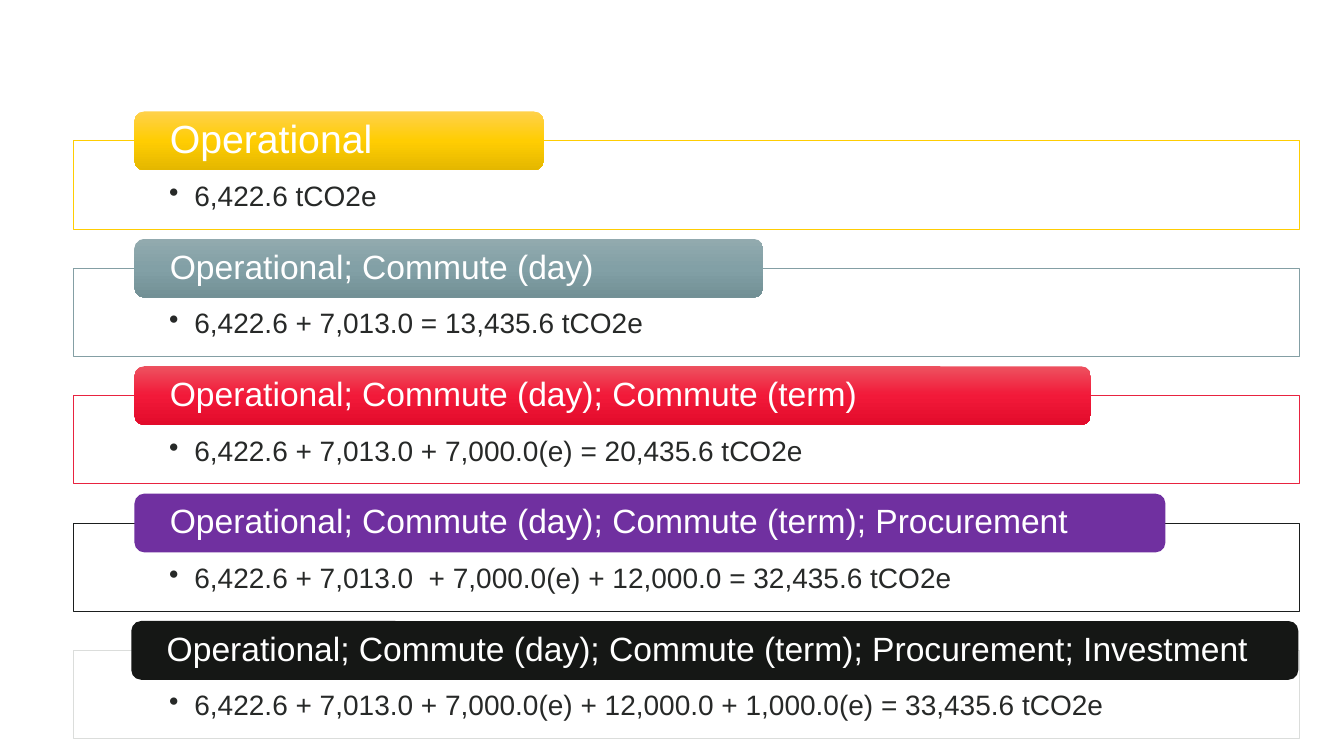
from copy import deepcopy
from pptx import Presentation
from pptx import util as u
from pptx.dml import color
from pptx.enum import shapes, text
from pptx.oxml import ns
from lxml import etree

ROWS = [
    ("Operational", "6,422.6 tCO2e", "gold", 3.39, 10.31, 28),
    ("Operational; Commute (day)", "6,422.6 + 7,013.0 = 13,435.6 tCO2e",
     "slate", 3.39, 15.85, 24),
    ("Operational; Commute (day); Commute (term)",
     "6,422.6 + 7,013.0 + 7,000.0(e) = 20,435.6 tCO2e",
     "red", 3.39, 24.1, 24),
    ("Operational; Commute (day); Commute (term); Procurement",
     "6,422.6 + 7,013.0  + 7,000.0(e) + 12,000.0 = 32,435.6 tCO2e",
     "violet", 3.39, 25.98, 24),
    ("Operational; Commute (day); Commute (term); Procurement; Investment",
     "6,422.6 + 7,013.0 + 7,000.0(e) + 12,000.0 + 1,000.0(e) = 33,435.6 tCO2e",
     "black", 3.31, 29.41, 24),
]
FILLS = {
    "gold": ["FFD14B", "FFCD02", "E4B700"],
    "slate": ["92AAAE", "82A0A6", "729095"],
    "red": ["ED515F", "F21939", "E20B2B"],
    "violet": ["7030A0"],
    "black": ["151715"],
}
LINES = {"gold": "FFCD02", "slate": "849FA4", "red": "E82340",
         "violet": "1B1E1E", "black": "DBDDDB"}
COLORS = {"white": "FFFFFF", "ink": "272928"}
LEFT, TOP, WIDTH, HIGH, STEP = 1.86, 3.55, 30.88, 2.22, 3.21
RISE, TALL = 0.74, 1.48
HANG = 0.64
CARD = {"margin_left": u.Cm(2.4), "margin_right": u.Cm(2.4),
        "margin_top": u.Cm(1.04), "margin_bottom": u.Cm(0.41),
        "vertical_anchor": text.MSO_ANCHOR.TOP, "word_wrap": True}
PILL = {"margin_left": u.Cm(0.82), "margin_right": u.Cm(0.82),
        "margin_top": 0, "margin_bottom": 0,
        "vertical_anchor": text.MSO_ANCHOR.MIDDLE, "word_wrap": True}
PARA = {"alignment": text.PP_ALIGN.LEFT, "line_spacing": 0.9}


def rgb(code):
    return color.RGBColor.from_string(code)


def put(item, form):
    for key, val in form.items():
        setattr(item, key, val)


def add_box(slide, kind, *area):
    box = slide.shapes.add_shape(kind, *map(u.Cm, area))
    box.shadow.inherit = False
    return box


def write(box, words, form, size, tint, dot=False):
    frame = box.text_frame
    put(frame, form)
    para = frame.paragraphs[0]
    put(para, PARA)
    if dot:
        para.level = 1
        props = para._p.get_or_add_pPr()
        props.set("marL", str(u.Cm(HANG)))
        props.set("indent", str(-u.Cm(HANG)))
        etree.SubElement(props, ns.qn("a:buChar"), char="•")
    run = para.add_run()
    run.text = words
    put(run.font, {"name": "Arial", "size": u.Pt(size)})
    run.font.color.rgb = rgb(COLORS[tint])


def paint(box, codes):
    fill = box.fill
    if len(codes) == 1:
        fill.solid()
        fill.fore_color.rgb = rgb(codes[0])
        return
    fill.gradient()
    fill.gradient_angle = 270
    stops = box._element.spPr.find(".//" + ns.qn("a:gsLst"))
    stops.insert(1, deepcopy(stops[0]))
    for num, (stop, code) in enumerate(zip(fill.gradient_stops, codes)):
        stop.position = num / 2
        stop.color.rgb = rgb(code)


def add_row(slide, num, head, sums, tone, left, width, size):
    top = TOP + num * STEP
    card = add_box(slide, shapes.MSO_SHAPE.RECTANGLE, LEFT, top, WIDTH, HIGH)
    paint(card, [COLORS["white"]])
    tint = card._element.spPr.find(".//" + ns.qn("a:srgbClr"))
    etree.SubElement(tint, ns.qn("a:alpha"), val="90000")
    card.line.color.rgb = rgb(LINES[tone])
    card.line.width = u.Pt(0.5)
    write(card, sums, CARD, 20, "ink", dot=True)

    pill = add_box(slide, shapes.MSO_SHAPE.ROUNDED_RECTANGLE,
                   left, top - RISE, width, TALL)
    paint(pill, FILLS[tone])
    pill.line.fill.background()
    write(pill, head, PILL, size, "white")


def main():
    deck = Presentation()
    put(deck, {"slide_width": u.Cm(33.87), "slide_height": u.Cm(19.05)})
    slide = deck.slides.add_slide(deck.slide_layouts[6])
    for num, row in enumerate(ROWS):
        add_row(slide, num, *row)
    deck.save("out.pptx")


if __name__ == "__main__":
    main()
